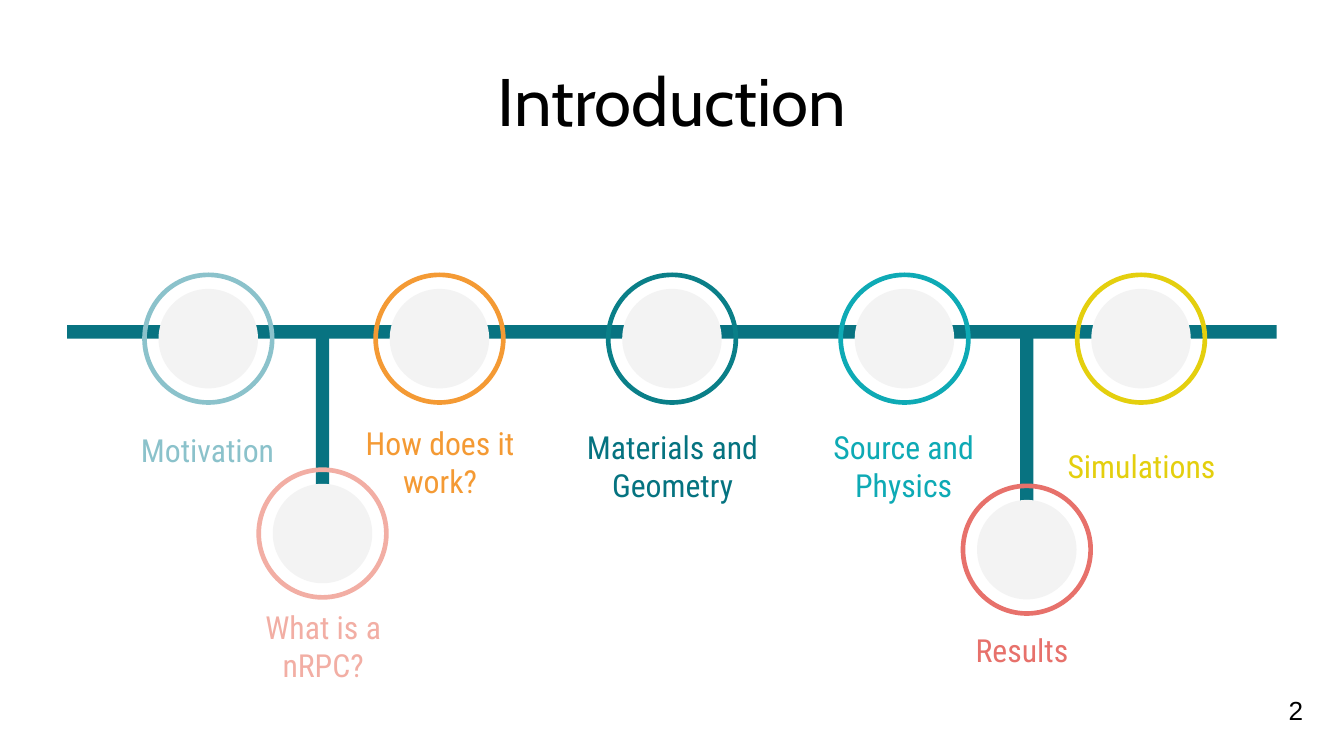
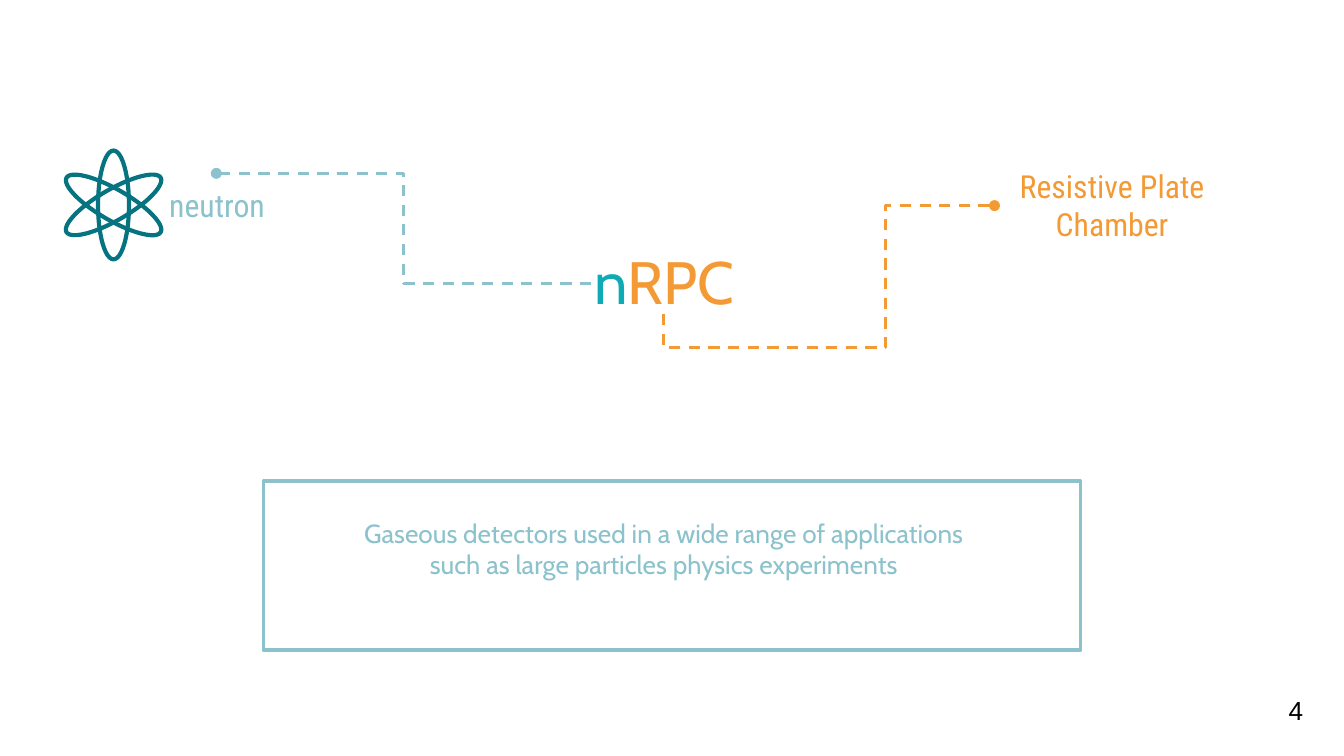
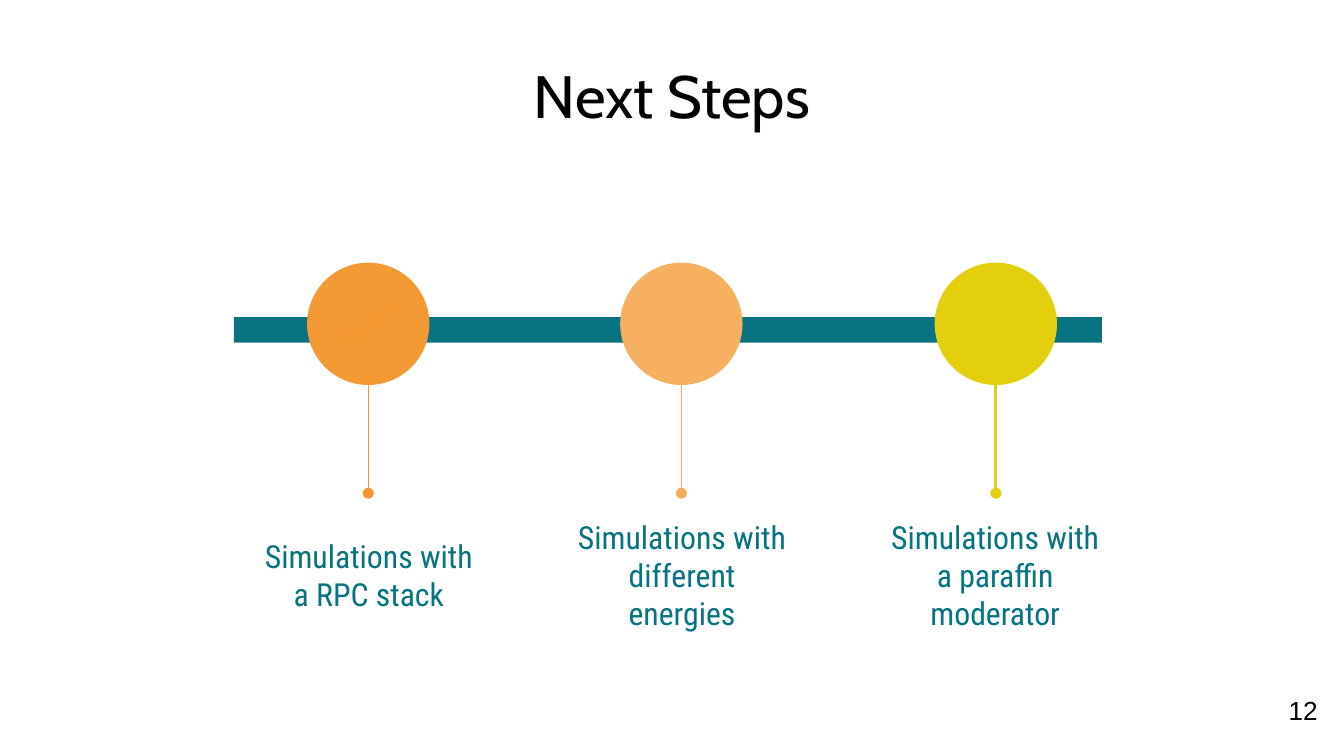
from lxml.etree import SubElement
from pptx import Presentation
from pptx.dml.color import RGBColor
from pptx.enum.dml import MSO_LINE
from pptx.enum.shapes import MSO_CONNECTOR, MSO_SHAPE
from pptx.enum.text import MSO_ANCHOR, MSO_AUTO_SIZE, PP_ALIGN
from pptx.oxml.ns import qn
from pptx.util import Inches, Pt

COLORS = {
    "black": "000000", "light gray": "F3F3F3", "bar": "087381",
    "petrol": "057380", "sea": "0A7F88", "turquoise": "0EAAB5",
    "pale blue": "8BC2CB", "orange": "F49A34", "deep orange": "F3972E",
    "apricot": "F7AF60", "dark apricot": "F5AB5A", "yellow": "E4CF0E",
    "pink": "F2AEA4", "coral": "E7716B",
}
TITLE_FONT = "Cabin"
LABEL_FONT = "Roboto Condensed"


def write_text(shape, runs, size, font=LABEL_FONT, align=PP_ALIGN.CENTER,
               anchor=MSO_ANCHOR.MIDDLE, wrap=True, margin=0.1):
    frame = shape.text_frame
    frame.auto_size = MSO_AUTO_SIZE.NONE
    frame.word_wrap = wrap
    frame.vertical_anchor = anchor
    frame.margin_left = frame.margin_right = Inches(0.1)
    frame.margin_top = frame.margin_bottom = Inches(margin)
    paragraph = frame.paragraphs[0]
    paragraph.alignment = align
    for text, color in runs:
        run = paragraph.add_run()
        run.text = text
        run.font.name = font
        run.font.size = Pt(size)
        run.font.color.rgb = RGBColor.from_string(COLORS[color])


def style(shape, fill=None, line=None, width=1.5, dashed=False, dot=None):
    """Works for shapes and connectors; dot is headEnd or tailEnd."""
    if fill:
        shape.fill.solid()
        shape.fill.fore_color.rgb = RGBColor.from_string(COLORS[fill])
    elif hasattr(shape, "fill"):
        shape.fill.background()
    if line:
        shape.line.color.rgb = RGBColor.from_string(COLORS[line])
        shape.line.width = Pt(width)
    else:
        shape.line.fill.background()
    if dashed:
        shape.line.dash_style = MSO_LINE.DASH
    properties = shape._element.spPr
    if dot:
        SubElement(properties.find(qn("a:ln")), qn("a:" + dot), type="oval")
    SubElement(properties, qn("a:effectLst"))


# 16:9 page
presentation = Presentation()
presentation.slide_width = Inches(10)
presentation.slide_height = Inches(10 * 9 / 16)

# Titles and page numbers
wide_title = (0.2, 0.34, 9.6, 0.63)
pages = [
    ([("Introduction", "black")], 36, wide_title, "2"),
    ([("n", "turquoise"), ("RPC", "orange")], 32, (4.11, 1.72, 1.67, 0.63), "4"),
    ([("Next Steps", "black")], 32, wide_title, "12"),
]
for runs, size, place, number in pages:
    slide = presentation.slides.add_slide(presentation.slide_layouts[5])
    title = slide.shapes.title
    title.left, title.top, title.width, title.height = map(Inches, place)
    write_text(title, runs, size, TITLE_FONT, anchor=MSO_ANCHOR.TOP)
    number_box = slide.shapes.add_textbox(
        Inches(9.49), Inches(5.12), Inches(0.2 + 0.11 * len(number)), Inches(0.34))
    write_text(number_box, [(number, "black")], 14, "Arial", PP_ALIGN.LEFT,
               MSO_ANCHOR.TOP, wrap=False, margin=0.05)
introduction, definition, next_steps = presentation.slides

# Introduction: timeline bar with two branches
shapes = introduction.shapes
for left, top, width, height in [
    (0.5, 2.42, 9, 0.1), (2.35, 2.44, 0.1, 1.53), (7.59, 2.48, 0.1, 1.54),
]:
    bar = shapes.add_shape(MSO_SHAPE.RECTANGLE, Inches(left), Inches(top),
                           Inches(width), Inches(height))
    style(bar, "bar")

# Introduction: topics as text, colour, circle centre, label place
topics = [
    ("Motivation", "pale blue", 1.55, 2.52, 0.73, 3.11, 1.63),
    ("What is a nRPC?", "pink", 2.4, 3.97, 1.59, 4.57, 1.63),
    ("How does it work?", "orange", 3.27, 2.52, 2.61, 3.2, 1.33),
    ("Materials and Geometry", "sea", 5, 2.52, 4.19, 3.23, 1.63),
    ("Source and Physics", "turquoise", 6.73, 2.52, 5.91, 3.23, 1.63),
    ("Results", "coral", 7.64, 4.09, 6.79, 4.6, 1.63),
    ("Simulations", "yellow", 8.49, 2.52, 7.68, 3.23, 1.63),
]
for text, color, x, y, label_left, label_top, label_width in topics:
    for diameter, fill, line in [(0.95, None, color), (0.74, "light gray", None)]:
        circle = shapes.add_shape(
            MSO_SHAPE.OVAL, Inches(x - diameter / 2), Inches(y - diameter / 2),
            Inches(diameter), Inches(diameter))
        style(circle, fill, line, 2.5)
    label = shapes.add_textbox(Inches(label_left), Inches(label_top),
                               Inches(label_width), Inches(0.47))
    write_text(label, [(text, "petrol" if color == "sea" else color)], 17)

# Definition: the two parts of the name
shapes = definition.shapes
for text, color, left in [
    ("neutron", "pale blue", 0.74), ("Resistive Plate Chamber", "orange", 7.4),
]:
    label = shapes.add_textbox(Inches(left), Inches(1.29), Inches(1.75), Inches(0.47))
    write_text(label, [(text, color)], 17)

neutron_link = shapes.add_connector(
    MSO_CONNECTOR.ELBOW, Inches(4.4), Inches(2.11), Inches(1.61), Inches(1.29))
style(neutron_link, line="pale blue", dashed=True, dot="tailEnd")
chamber_link = shapes.add_connector(
    MSO_CONNECTOR.ELBOW, Inches(7.4), Inches(1.53), Inches(4.94), Inches(2.34))
style(chamber_link, line="orange", dashed=True, dot="headEnd")
geometry = chamber_link._element.spPr.find(qn("a:prstGeom"))
geometry.set("prst", "bentConnector4")
adjustments = geometry.find(qn("a:avLst"))
for name, value in [("adj1", 33000), ("adj2", 130700)]:
    SubElement(adjustments, qn("a:gd"), name=name, fmla=f"val {value}")

# Definition: atom made of three orbits
for angle in (0, 60, 120):
    orbit = shapes.add_shape(MSO_SHAPE.OVAL, Inches(0.73), Inches(1.12),
                             Inches(0.23), Inches(0.81))
    orbit.rotation = angle
    style(orbit, line="petrol", width=2.25)

# Definition: framed description
description_frame = shapes.add_shape(MSO_SHAPE.RECTANGLE, Inches(1.96), Inches(3.58),
                                     Inches(6.08), Inches(1.26))
style(description_frame, line="pale blue", width=2)
description = shapes.add_textbox(Inches(2.44), Inches(3.8), Inches(5), Inches(0.81))
write_text(description, [(
    "Gaseous detectors used in a wide range of applications "
    "such as large particles physics experiments", "pale blue")],
    14, TITLE_FONT, anchor=MSO_ANCHOR.TOP, margin=0.05)

# Next steps: stems behind the bar, circles in front
shapes = next_steps.shapes
steps = [
    ("Simulations with a RPC stack", "orange", "deep orange", 0.75, 2.74),
    ("Simulations with different energies", "apricot", "dark apricot", 0.75, 5.07),
    ("Simulations with a paraffin moderator", "yellow", "yellow", 1.5, 7.41),
]
for text, color, stem_color, stem_width, x in steps:
    stem = shapes.add_connector(MSO_CONNECTOR.STRAIGHT, Inches(x), Inches(2.21),
                                Inches(x), Inches(3.67))
    style(stem, line=stem_color, width=stem_width, dot="tailEnd")

bar = shapes.add_shape(MSO_SHAPE.RECTANGLE, Inches(1.74), Inches(2.36),
                       Inches(6.46), Inches(0.19))
style(bar, "bar")

for index, (text, color, stem_color, stem_width, x) in enumerate(steps):
    circle = shapes.add_shape(MSO_SHAPE.OVAL, Inches(x - 0.45), Inches(1.96),
                              Inches(0.9), Inches(0.9))
    style(circle, color, color, 0.75)
    label = shapes.add_textbox(Inches(1.87 + 2.33 * index), Inches(4.04),
                               Inches(1.75), Inches(0.47))
    write_text(label, [(text, "petrol")], 17)

# Next steps: tick in the first circle
tick = [(2.49, 2.41), (2.62, 2.55), (2.92, 2.27)]
for start, end in zip(tick, tick[1:]):
    stroke = shapes.add_connector(MSO_CONNECTOR.STRAIGHT, *map(Inches, start + end))
    style(stroke, line="deep orange")

presentation.save("out.pptx")
